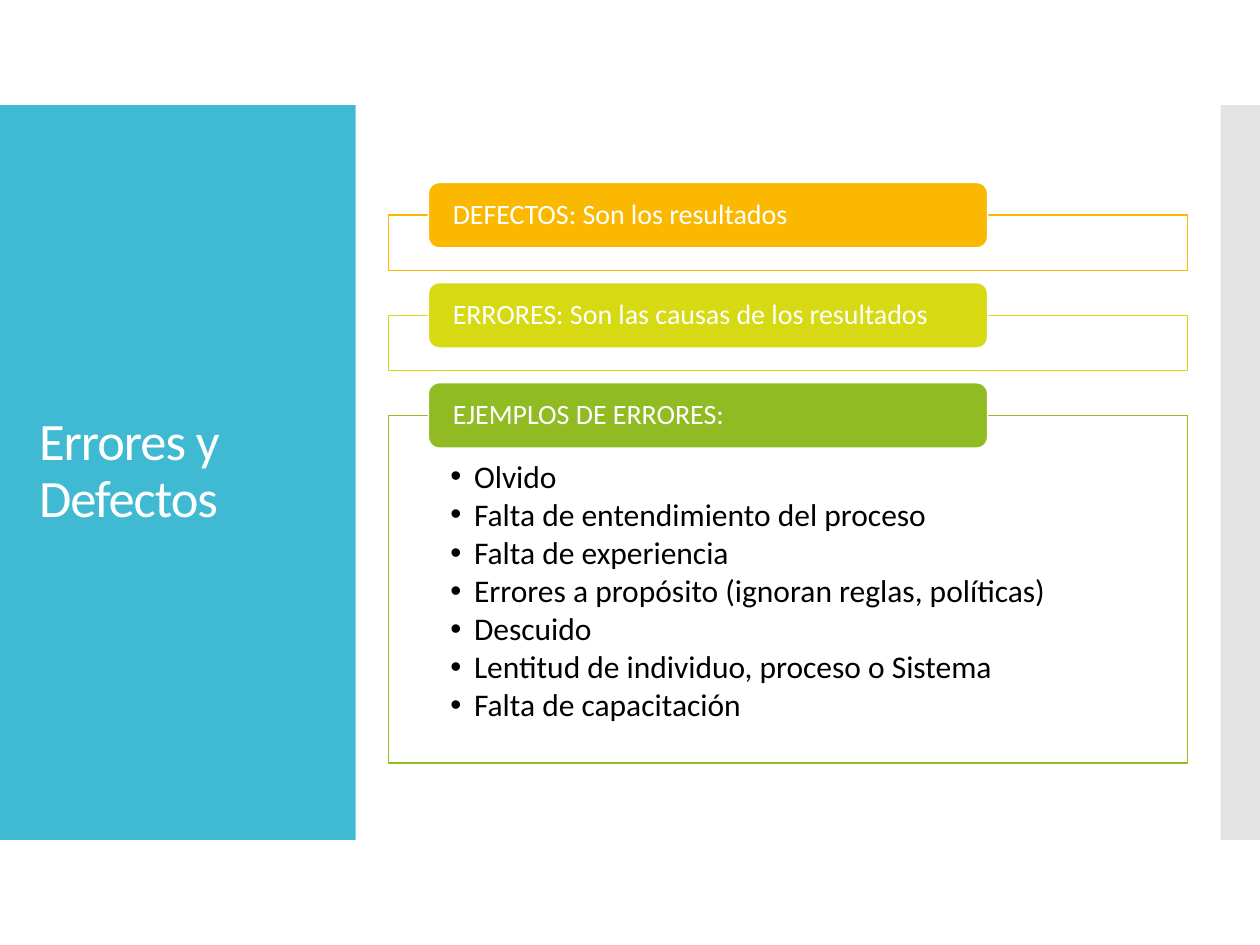
from dataclasses import dataclass

from lxml.etree import SubElement
from pptx import Presentation
from pptx.dml.color import RGBColor
from pptx.enum.shapes import MSO_SHAPE as Preset
from pptx.enum.text import MSO_ANCHOR as Anchor, MSO_AUTO_SIZE as AutoSize, PP_ALIGN as Align
from pptx.oxml.ns import qn
from pptx.util import Pt


@dataclass(frozen=True)
class Theme:
    font: str = "Calibri"
    title_size: float = 30
    heading_size: float = 16
    bullet_size: float = 18
    white: str = "FFFFFF"
    black: str = "000000"
    panel: str = "40BAD2"
    strip: str = "C8C8C8"
    defects: str = "FAB900"
    errors: str = "D7D913"
    examples: str = "90BB23"
    line_width: float = 0.85
    line_spacing: float = 0.9


THEME = Theme()
SECTIONS = [
    ("DEFECTOS: Son los resultados", THEME.defects, 31.7, []),
    ("ERRORES: Son las causas de los resultados", THEME.errors, 31.7, []),
    ("EJEMPLOS DE ERRORES:", THEME.examples, 198.7, [
        "Olvido",
        "Falta de entendimiento del proceso",
        "Falta de experiencia",
        "Errores a propósito (ignoran reglas, políticas)",
        "Descuido",
        "Lentitud de individuo, proceso o Sistema",
        "Falta de capacitación",
    ]),
]


def add_box(slide, preset, box, fill, line=None, opacity=100):
    shape = slide.shapes.add_shape(preset, *map(Pt, box))
    shape.shadow.inherit = False
    shape.fill.solid()
    shape.fill.fore_color.rgb = RGBColor.from_string(fill)
    if opacity < 100:
        color = shape.element.spPr.find(qn("a:solidFill"))[0]
        SubElement(color, qn("a:alpha")).set("val", str(opacity * 1000))
    if line:
        shape.line.color.rgb = RGBColor.from_string(line)
        shape.line.width = Pt(THEME.line_width)
    else:
        shape.line.fill.background()
    return shape


def set_frame(frame, anchor, left, top, right, bottom):
    frame.word_wrap = True
    frame.auto_size = AutoSize.NONE
    frame.vertical_anchor = anchor
    frame.margin_left, frame.margin_top = Pt(left), Pt(top)
    frame.margin_right, frame.margin_bottom = Pt(right), Pt(bottom)


def write(paragraph, text, size, color):
    paragraph.alignment = Align.LEFT
    paragraph.line_spacing = THEME.line_spacing
    run = paragraph.add_run()
    run.text = text
    run.font.name = THEME.font
    run.font.size = Pt(size)
    run.font.color.rgb = RGBColor.from_string(color)
    return run


def add_bullet(paragraph):
    properties = paragraph._p.get_or_add_pPr()
    properties.set("marL", str(Pt(13.5)))
    properties.set("indent", str(Pt(-13.5)))
    SubElement(properties, qn("a:buFont")).set("typeface", "Arial")
    SubElement(properties, qn("a:buChar")).set("char", "•")


def build_title_panel(slide, left, top, width, height):
    add_box(slide, Preset.RECTANGLE, (left, top, width, height), THEME.panel)
    title = slide.shapes.title
    title.left, title.top = Pt(left + 15.1), Pt(top + 28.6)
    title.width, title.height = Pt(174.2), Pt(height - 57.8)
    title.element.getparent().append(title.element)
    set_frame(title.text_frame, Anchor.MIDDLE, 7.2, 3.6, 7.2, 3.6)
    run = write(title.text_frame.paragraphs[0], "Errores y Defectos", THEME.title_size, THEME.white)
    run._r.get_or_add_rPr().set("spc", "-60")


def build_section(slide, left, top, width, height, heading, color, bullets):
    body = add_box(slide, Preset.RECTANGLE, (left, top, width, height), THEME.white, color, 90)
    set_frame(body.text_frame, Anchor.TOP, 35.4, 26, 35.4, 10)
    for index, bullet in enumerate(bullets):
        paragraph = body.text_frame.add_paragraph() if index else body.text_frame.paragraphs[0]
        write(paragraph, bullet, THEME.bullet_size, THEME.black)
        paragraph.space_after = Pt(2.3)
        add_bullet(paragraph)

    tab_box = (left + 22.8, top - 18.7, width * 0.7, 37.4)
    tab = add_box(slide, Preset.ROUNDED_RECTANGLE, tab_box, color, THEME.white)
    set_frame(tab.text_frame, Anchor.MIDDLE, 12.1, 0, 12.1, 0)
    write(tab.text_frame.paragraphs[0], heading, THEME.heading_size, THEME.white)


def build_sections(slide, left, top, width, gap):
    for heading, color, height, bullets in SECTIONS:
        build_section(slide, left, top, width, height, heading, color, bullets)
        top += height + gap


def main():
    deck = Presentation()
    deck.slide_width, deck.slide_height = Pt(720), Pt(540)
    slide = deck.slides.add_slide(deck.slide_layouts[5])
    build_title_panel(slide, 0, 60, 203.3, 420)
    add_box(slide, Preset.RECTANGLE, (697.5, 60, 22.5, 420), THEME.strip, opacity=50)
    build_sections(slide, 222, 123, 456.5, 25.5)
    deck.save("out.pptx")


if __name__ == "__main__":
    main()
